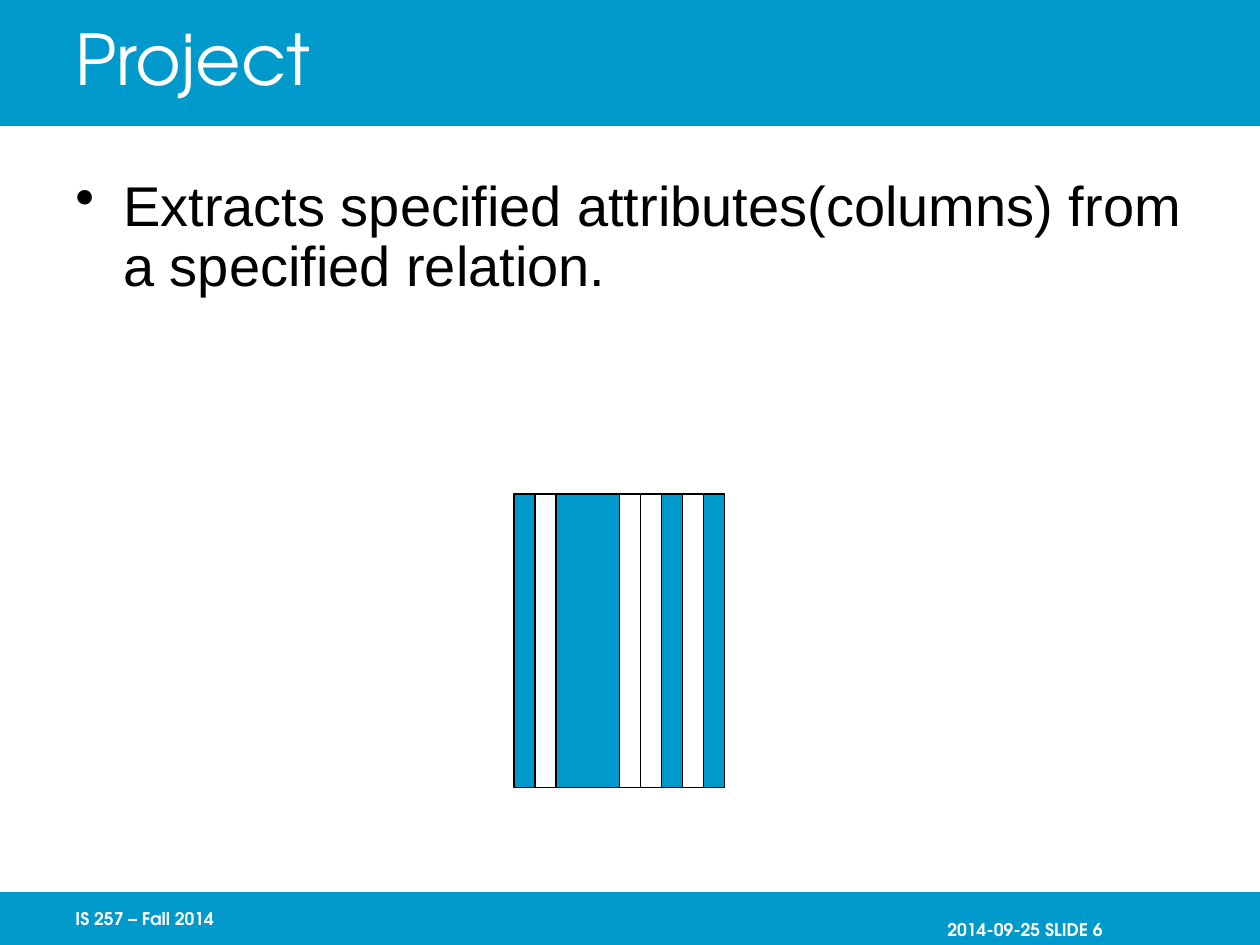
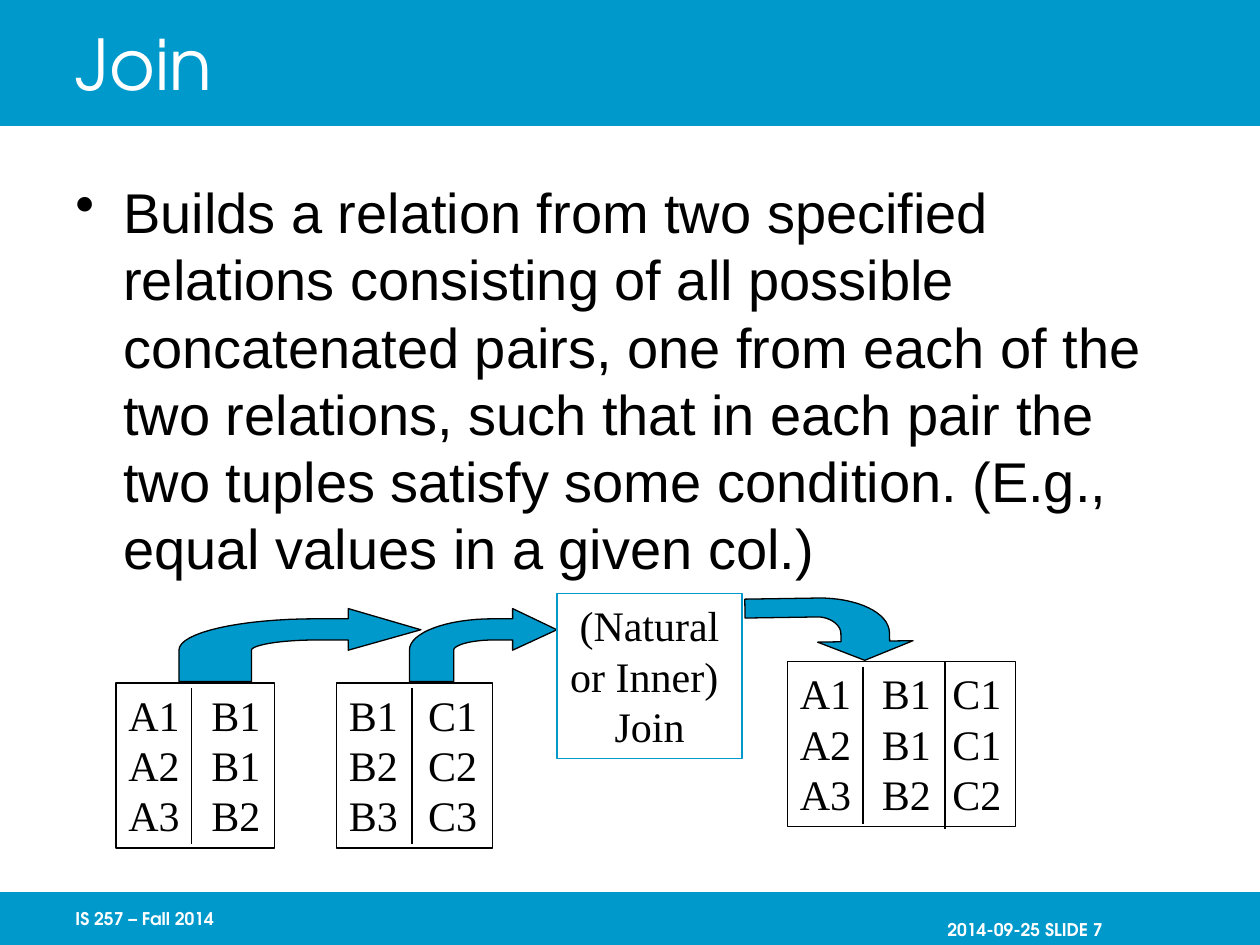
"""Two lecture slides on the relational operators Project and Join."""
from dataclasses import dataclass

from lxml.etree import SubElement
from pptx import Presentation
from pptx.dml.color import RGBColor
from pptx.enum.shapes import MSO_CONNECTOR, MSO_SHAPE
from pptx.enum.text import MSO_ANCHOR, PP_ALIGN
from pptx.oxml.ns import qn
from pptx.util import Inches, Pt


@dataclass(frozen=True)
class Theme:
    """Colours, fonts and type sizes shared by the slides."""
    blue: RGBColor = RGBColor(0x00, 0x99, 0xCC)
    white: RGBColor = RGBColor(0xFF, 0xFF, 0xFF)
    black: RGBColor = RGBColor(0, 0, 0)
    heading_font: str = "TeX Gyre Adventor"
    body_font: str = "Arial"
    diagram_font: str = "Times New Roman"
    title_size: int = 40
    body_size: int = 32
    diagram_size: int = 24
    footer_size: int = 10
    line_width: float = 0.75


THEME = Theme()
COURSE = "IS 257 – Fall 2014"
BANDS = [(0, 0, 10, 1), (0, 7.08, 10, 0.42)]

PROJECT = {
    "title": "Project",
    "body": "Extracts specified attributes(columns) from a specified relation.",
    "footer": "2014-09-25 SLIDE 6",
    "line_spacing": 0.9,
}
JOIN = {
    "title": "Join",
    "body": "Builds a relation from two specified relations consisting of all "
            "possible concatenated pairs, one from each of the two relations, "
            "such that in each pair the two tuples satisfy some condition. "
            "(E.g., equal values in a given col.)",
    "footer": "2014-09-25 SLIDE 7",
    "line_spacing": 1.0,
}

STRIPED_RELATION = (4.08, 3.92, 1.67, 2.33)
STRIPE_COUNT = 10
DROPPED_STRIPES = [1, 5, 6, 8]

RELATIONS = [
    {"box": (0.92, 5.42, 1.26, 1.31), "tabs": [0.66],
     "rows": [("A1", "B1"), ("A2", "B1"), ("A3", "B2")],
     "dividers": [(0.6, 0.04, 1.28)]},
    {"box": (2.67, 5.42, 1.24, 1.31), "tabs": [0.63],
     "rows": [("B1", "C1"), ("B2", "C2"), ("B3", "C3")],
     "dividers": [(0.6, 0.04, 1.28)]},
    {"box": (6.25, 5.25, 1.81, 1.31), "tabs": [0.65, 1.21],
     "rows": [("A1", "B1", "C1"), ("A2", "B1", "C1"), ("A3", "B2", "C2")],
     "dividers": [(0.6, 0.04, 1.29), (1.25, 0, 1.33)]},
]
JOIN_BOX = (4.42, 4.71, 1.47, 1.31)
JOIN_LINES = ["(Natural", "or Inner) ", "Join"]
BENT_ARROWS = [
    ((1.42, 4.83, 1.92, 0.58), 0),
    ((3.25, 4.83, 1.17, 0.58), 0),
    ((6.33, 4.33, 0.5, 1.33), 89.1),
]


def inches(box):
    """Convert a box of numbers to lengths."""
    return [Inches(value) for value in box]


def style_font(paragraph, name, size, color, bold=False):
    """Set the font of a whole paragraph."""
    font = paragraph.font
    font.name, font.size, font.bold = name, Pt(size), bold
    font.color.rgb = color


def style_shape(shape, fill=None, line=None):
    """Give a shape a flat fill and a thin line, or neither."""
    shape.shadow.inherit = False
    if fill is None:
        shape.fill.background()
    else:
        shape.fill.solid()
        shape.fill.fore_color.rgb = fill
    if line is None:
        shape.line.fill.background()
    else:
        shape.line.color.rgb = line
        shape.line.width = Pt(THEME.line_width)


def add_rectangle(shapes, box, fill=None, line=None):
    """Add a flat rectangle."""
    shape = shapes.add_shape(MSO_SHAPE.RECTANGLE, *inches(box))
    style_shape(shape, fill, line)
    return shape


def add_footer(slide, box, text, alignment, top=0.05, right=0.0, bottom=0.05):
    """Add a text in the bottom band."""
    frame = slide.shapes.add_textbox(*inches(box)).text_frame
    frame.word_wrap = True
    frame.vertical_anchor = MSO_ANCHOR.MIDDLE
    frame.margin_top, frame.margin_right, frame.margin_bottom = inches((top, right, bottom))
    paragraph = frame.paragraphs[0]
    paragraph.text, paragraph.alignment = text, alignment
    style_font(paragraph, THEME.heading_font, THEME.footer_size, THEME.white, True)


def add_body(slide, text, line_spacing):
    """Add the bulleted statement below the title."""
    frame = slide.shapes.add_textbox(*inches((0.5, 1.33, 9, 5.42))).text_frame
    frame.word_wrap = True
    frame.margin_top, frame.margin_bottom = Inches(0.08), 0
    paragraph = frame.paragraphs[0]
    paragraph.text, paragraph.line_spacing = text, line_spacing
    properties = paragraph._p.get_or_add_pPr()
    properties.set("marL", str(Inches(0.38)))
    properties.set("indent", str(-Inches(0.38)))
    SubElement(properties, qn("a:buChar")).set("char", "•")
    style_font(paragraph, THEME.body_font, THEME.body_size, THEME.black)


def add_lecture_slide(presentation, content):
    """Add a slide with bands, title, footers and body text."""
    slide = presentation.slides.add_slide(presentation.slide_layouts[5])
    for band in BANDS:
        add_rectangle(slide.shapes, band, THEME.blue)
    add_footer(slide, (7.42, 7.08, 2.08, 0.42), content["footer"],
               PP_ALIGN.RIGHT, top=0.17, right=0.75, bottom=0)
    add_footer(slide, (0.5, 7.08, 2.08, 0.42), COURSE, PP_ALIGN.LEFT)

    title = slide.shapes.title
    title.element.getparent().append(title.element)
    title.left, title.top, title.width, title.height = inches((0.5, 0, 8.5, 1))
    title.text_frame.vertical_anchor = MSO_ANCHOR.MIDDLE
    paragraph = title.text_frame.paragraphs[0]
    paragraph.text, paragraph.alignment = content["title"], PP_ALIGN.LEFT
    paragraph.line_spacing = content["line_spacing"]
    style_font(paragraph, THEME.heading_font, THEME.title_size, THEME.white)
    add_body(slide, content["body"], content["line_spacing"])
    return slide


def add_striped_relation(slide):
    """Draw a relation whose dropped columns are white."""
    left, top, width, height = STRIPED_RELATION
    stripe = width / STRIPE_COUNT
    add_rectangle(slide.shapes, STRIPED_RELATION, THEME.blue, THEME.black)
    for index in DROPPED_STRIPES:
        add_rectangle(slide.shapes, (left + index * stripe, top, stripe, height),
                      THEME.white, THEME.black)


def write_lines(shape, lines, alignment, tabs=()):
    """Write diagram lines into a shape, with optional tab stops."""
    frame = shape.text_frame
    frame.word_wrap = bool(tabs)
    frame.vertical_anchor = MSO_ANCHOR.TOP
    frame.text = "\n".join(lines)
    for paragraph in frame.paragraphs:
        paragraph.alignment = alignment
        if tabs:
            stops = SubElement(paragraph._p.get_or_add_pPr(), qn("a:tabLst"))
            for position in tabs:
                stop = SubElement(stops, qn("a:tab"))
                stop.set("pos", str(Inches(position)))
                stop.set("algn", "l")
        style_font(paragraph, THEME.diagram_font, THEME.diagram_size, THEME.black)


def add_relation(slide, relation):
    """Draw a small relation as a group of box and column dividers."""
    group = slide.shapes.add_group_shape()
    left, top = relation["box"][:2]
    box = add_rectangle(group.shapes, relation["box"], line=THEME.black)
    write_lines(box, ["\t".join(row) for row in relation["rows"]],
                PP_ALIGN.LEFT, relation["tabs"])
    for offset, start, end in relation["dividers"]:
        ends = (left + offset, top + start, left + offset, top + end)
        divider = group.shapes.add_connector(MSO_CONNECTOR.STRAIGHT, *inches(ends))
        divider.line.color.rgb = THEME.black
        divider.line.width = Pt(THEME.line_width)
        SubElement(divider._element.spPr, qn("a:effectLst"))


def curve(start, control_1, control_2, end, steps=16):
    """Return points along a cubic curve."""
    points = []
    for step in range(steps + 1):
        t = step / steps
        weights = ((1 - t) ** 3, 3 * t * (1 - t) ** 2, 3 * t * t * (1 - t), t ** 3)
        points.append(tuple(sum(weight * value for weight, value in zip(weights, values))
                            for values in zip(start, control_1, control_2, end)))
    return points


def add_bent_arrow(slide, box, rotation):
    """Draw a bent arrow that fills a box, then turn it."""
    left, top, width, height = box
    outline = [(1, 0.29), (0.7, 0), (0.7, 0.14)]
    outline += curve((0.57, 0.14), (0.25, 0.14), (0, 0.33), (0, 0.57))
    outline += [(0, 1), (0.3, 1)]
    outline += curve((0.3, 0.57), (0.3, 0.5), (0.42, 0.43), (0.57, 0.43))
    outline += [(0.7, 0.43), (0.7, 0.57)]
    points = [(Inches(left + x * width), Inches(top + y * height)) for x, y in outline]
    builder = slide.shapes.build_freeform(*points[0])
    builder.add_line_segments(points[1:], close=True)
    arrow = builder.convert_to_shape()
    style_shape(arrow, THEME.blue, THEME.black)
    arrow.rotation = rotation


def main():
    """Build and save the slides."""
    presentation = Presentation()
    presentation.slide_width, presentation.slide_height = Inches(10), Inches(7.5)

    add_striped_relation(add_lecture_slide(presentation, PROJECT))

    join_slide = add_lecture_slide(presentation, JOIN)
    for relation in RELATIONS:
        add_relation(join_slide, relation)
    for box, rotation in BENT_ARROWS:
        add_bent_arrow(join_slide, box, rotation)
    join_box = add_rectangle(join_slide.shapes, JOIN_BOX, line=THEME.blue)
    write_lines(join_box, JOIN_LINES, PP_ALIGN.CENTER)

    presentation.save("out.pptx")


if __name__ == "__main__":
    main()
